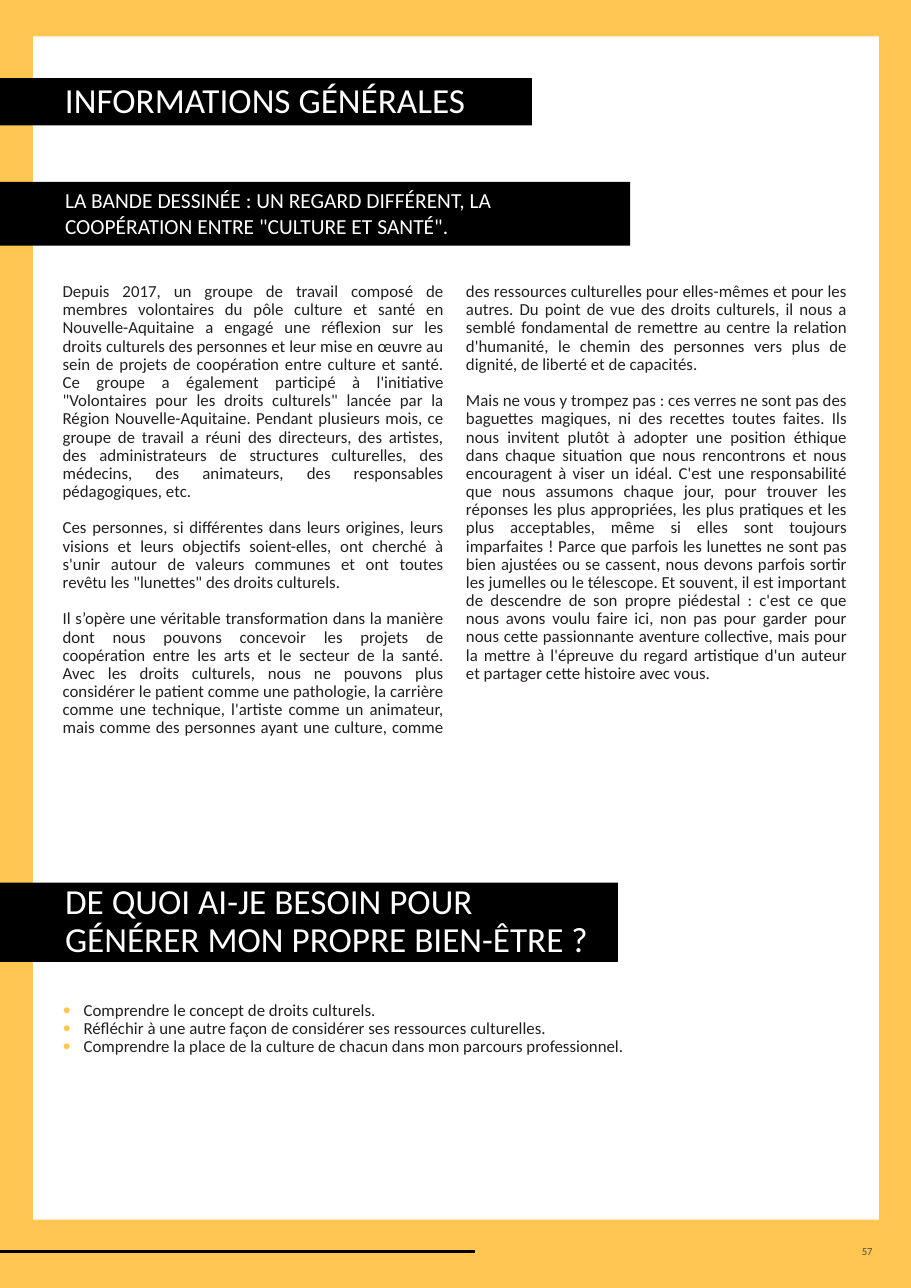
"""Build the general information page of the cultural rights workbook."""
import lxml.etree
import pptx
import pptx.dml.color
import pptx.enum.shapes
import pptx.enum.text
import pptx.oxml.ns
import pptx.util

PX = 9144
THEME = {
    "font": "Calibri",
    "yellow": "FFC652", "white": "FFFFFF", "black": "000000",
    "ink": "221F1F", "grey": "4B4B4B",
    "title": 23, "subtitle": 14, "body": 11, "folio": 7,
}
ALIGN = pptx.enum.text.PP_ALIGN
ANCHOR = pptx.enum.text.MSO_ANCHOR
PAGE_WIDTH, PAGE_HEIGHT = 827, 1169

presentation = pptx.Presentation()
presentation.slide_width = PAGE_WIDTH * PX
presentation.slide_height = PAGE_HEIGHT * PX
slide = presentation.slides.add_slide(presentation.slide_layouts[6])


def add_block(left, top, width, height, color):
    block = slide.shapes.add_shape(
        pptx.enum.shapes.MSO_SHAPE.RECTANGLE,
        left * PX, top * PX, width * PX, height * PX)
    block.shadow.inherit = False
    block.fill.solid()
    block.fill.fore_color.rgb = pptx.dml.color.RGBColor.from_string(THEME[color])
    block.line.fill.background()
    return block


def write(frame, paragraphs, size, color, align, spacing=0.9, anchor=ANCHOR.TOP):
    frame.word_wrap = True
    frame.vertical_anchor = anchor
    frame.text = "\n".join(paragraphs)
    for paragraph in frame.paragraphs:
        paragraph.alignment = align
        paragraph.line_spacing = spacing
        font = paragraph.runs[0].font
        font.name = THEME["font"]
        font.size = pptx.util.Pt(THEME[size])
        font.color.rgb = pptx.dml.color.RGBColor.from_string(THEME[color])


add_block(0, 0, PAGE_WIDTH, PAGE_HEIGHT, "yellow")
add_block(30, 33, 768, 1074, "white")

footer_rule = slide.shapes.add_connector(
    pptx.enum.shapes.MSO_CONNECTOR.STRAIGHT, 0, 1136 * PX, 431 * PX, 1136 * PX)
footer_rule.line.width = pptx.util.Pt(1.5)
footer_rule.line.color.rgb = pptx.dml.color.RGBColor.from_string(THEME["black"])
lxml.etree.SubElement(footer_rule._element.spPr, pptx.oxml.ns.qn("a:effectLst"))

folio = slide.shapes.add_textbox(694 * PX, 1128 * PX, 108 * PX, 16 * PX).text_frame
folio.margin_top = folio.margin_bottom = 0
write(folio, ["57"], "folio", "grey", ALIGN.RIGHT, 1, ANCHOR.MIDDLE)

banners = [
    (71, 483, 43, "INFORMATIONS GÉNÉRALES", "title", 0.9, ANCHOR.MIDDLE),
    (165, 572, 58,
     'LA BANDE DESSINÉE : UN REGARD DIFFÉRENT, LA COOPÉRATION ENTRE "CULTURE ET SANTÉ".',
     "subtitle", 1, ANCHOR.TOP),
    (801, 561, 72, "DE QUOI AI-JE BESOIN POUR GÉNÉRER MON PROPRE BIEN-ÊTRE ?",
     "title", 0.9, ANCHOR.MIDDLE),
]
for top, width, height, heading, size, spacing, anchor in banners:
    banner = add_block(0, top, width, height, "black").text_frame
    banner.margin_left = 59 * PX
    write(banner, [heading], size, "white", ALIGN.LEFT, spacing, anchor)

story = [
    ["Depuis 2017, un groupe de travail composé de membres volontaires du pôle culture et santé "
     "en Nouvelle-Aquitaine a engagé une réflexion sur les droits culturels des personnes et leur "
     "mise en œuvre au sein de projets de coopération entre culture et santé.",
     "Ce groupe a également participé à l'initiative \"Volontaires pour les droits culturels\" "
     "lancée par la Région Nouvelle-Aquitaine.",
     "Pendant plusieurs mois, ce groupe de travail a réuni des directeurs, des artistes, des "
     "administrateurs de structures culturelles, des médecins, des animateurs, des responsables "
     "pédagogiques, etc."],
    ["Ces personnes, si différentes dans leurs origines, leurs visions et leurs objectifs "
     "soient-elles, ont cherché à s'unir autour de valeurs communes et ont toutes revêtu les "
     "\"lunettes\" des droits culturels."],
    ["Il s’opère une véritable transformation dans la manière dont nous pouvons concevoir les "
     "projets de coopération entre les arts et le secteur de la santé.",
     "Avec les droits culturels, nous ne pouvons plus considérer le patient comme une pathologie, "
     "la carrière comme une technique, l'artiste comme un animateur, mais comme des personnes "
     "ayant une culture, comme des ressources culturelles pour elles-mêmes et pour les autres.",
     "Du point de vue des droits culturels, il nous a semblé fondamental de remettre au centre la "
     "relation d'humanité, le chemin des personnes vers plus de dignité, de liberté et de "
     "capacités."],
    ["Mais ne vous y trompez pas : ces verres ne sont pas des baguettes magiques, ni des recettes "
     "toutes faites.",
     "Ils nous invitent plutôt à adopter une position éthique dans chaque situation que nous "
     "rencontrons et nous encouragent à viser un idéal.",
     "C'est une responsabilité que nous assumons chaque jour, pour trouver les réponses les plus "
     "appropriées, les plus pratiques et les plus acceptables, même si elles sont toujours "
     "imparfaites !",
     "Parce que parfois les lunettes ne sont pas bien ajustées ou se cassent, nous devons parfois "
     "sortir les jumelles ou le télescope.",
     "Et souvent, il est important de descendre de son propre piédestal : c'est ce que nous avons "
     "voulu faire ici, non pas pour garder pour nous cette passionnante aventure collective, mais "
     "pour la mettre à l'épreuve du regard artistique d'un auteur et partager cette histoire avec "
     "vous."],
]
columns = slide.shapes.add_textbox(47 * PX, 252 * PX, 732 * PX, 430 * PX).text_frame
write(columns, [" ".join(sentences) for sentences in story], "body", "ink", ALIGN.JUSTIFY)
column_settings = columns._txBody.bodyPr
column_settings.set("numCol", "2")
column_settings.set("spcCol", str(20 * PX))
for paragraph in columns.paragraphs[1:]:
    paragraph.space_before = pptx.util.Pt(11.9)

needs = [
    "Comprendre le concept de droits culturels.",
    "Réfléchir à une autre façon de considérer ses ressources culturelles.",
    "Comprendre la place de la culture de chacun dans mon parcours professionnel.",
]
checklist = slide.shapes.add_textbox(47 * PX, 904 * PX, 732 * PX, 72 * PX).text_frame
write(checklist, needs, "body", "ink", ALIGN.JUSTIFY)
for paragraph in checklist.paragraphs:
    properties = paragraph._p.get_or_add_pPr()
    properties.set("marL", str(19 * PX))
    properties.set("indent", str(-19 * PX))
    bullet_color = lxml.etree.SubElement(properties, pptx.oxml.ns.qn("a:buClr"))
    lxml.etree.SubElement(bullet_color, pptx.oxml.ns.qn("a:srgbClr"), val=THEME["yellow"])
    lxml.etree.SubElement(properties, pptx.oxml.ns.qn("a:buFont"), typeface=THEME["font"])
    lxml.etree.SubElement(properties, pptx.oxml.ns.qn("a:buChar"), char="•")

presentation.save("out.pptx")
